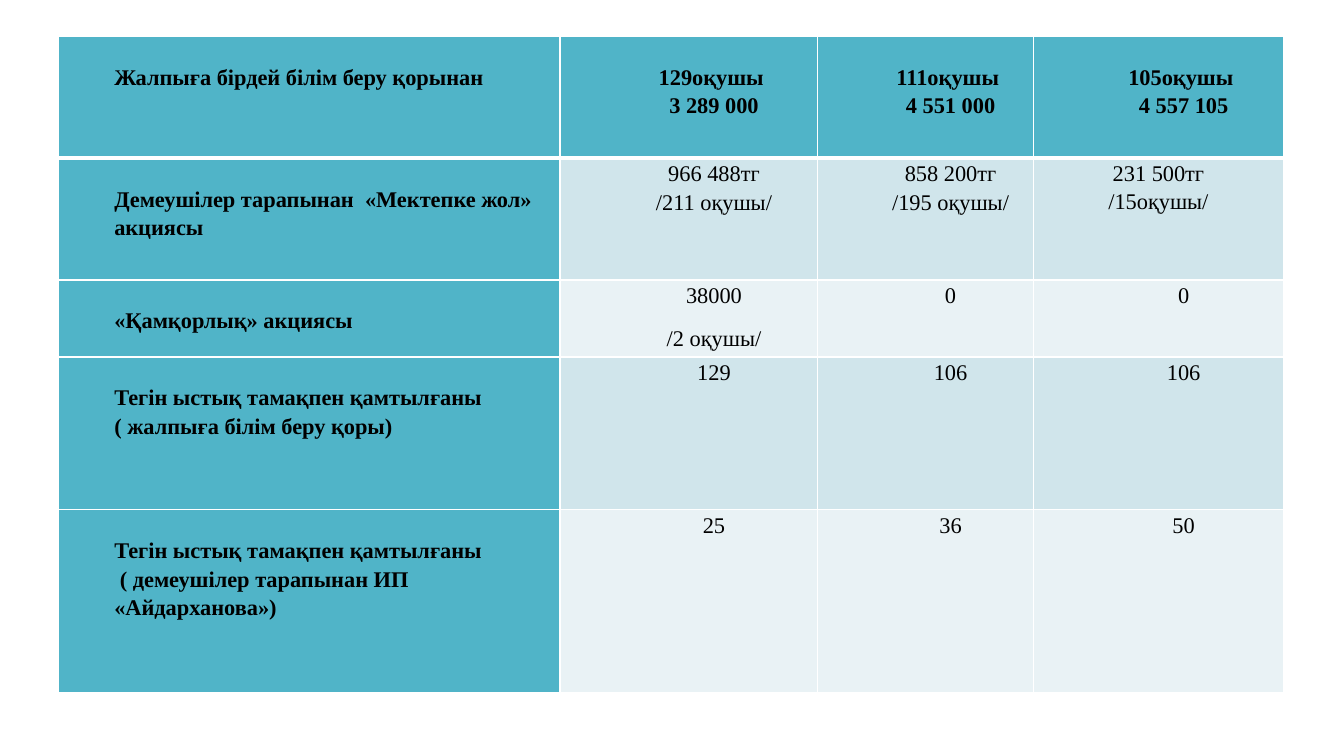
"""Build a slide with a table of school aid figures."""
from lxml.etree import SubElement
from pptx import Presentation
from pptx.dml.color import RGBColor as RGB
from pptx.enum.text import PP_ALIGN as Align
from pptx.oxml.ns import qn
from pptx.util import Pt


def color(code):
    return RGB.from_string(code)


def border(cell, side, width):
    line = SubElement(cell._tc.get_or_add_tcPr(), qn("a:ln" + side), w=str(Pt(width)))
    fill = SubElement(line, qn("a:solidFill"))
    SubElement(fill, qn("a:srgbClr"), val="FFFFFF")


rows = [
    ["Жалпыға бірдей білім беру қорынан", "129оқушы \n3\u00a0289 000",
     "111оқушы \n4\u00a0551 000", "105оқушы \n4\u00a0557 105"],
    ["Демеушілер тарапынан  «Мектепке жол» акциясы", "966 488тг\n/211 оқушы/",
     "858 200тг\n/195 оқушы/", "231\u00a0500тг\n/15оқушы/"],
    ["«Қамқорлық» акциясы", "38000\n/2 оқушы/", "0", "0"],
    ["Тегін ыстық тамақпен қамтылғаны\n( жалпыға білім беру қоры)",
     "129", "106", "106"],
    ["Тегін ыстық тамақпен қамтылғаны\n ( демеушілер тарапынан ИП «Айдарханова»)",
     "25", "36", "50"],
]
widths = [358, 184, 154, 179]
heights = [87, 87, 55, 109, 131]
bands = ["E9F2F5", "D0E5EB"]

deck = Presentation()
deck.slide_width, deck.slide_height = Pt(960), Pt(540)
slide = deck.slides.add_slide(deck.slide_layouts[6])
table = slide.shapes.add_table(
    len(rows), len(widths), Pt(42), Pt(26), Pt(sum(widths)), Pt(sum(heights))).table
for col, width in zip(table.columns, widths):
    col.width = Pt(width)
for row, height in zip(table.rows, heights):
    row.height = Pt(height)

for r, texts in enumerate(rows):
    for c, text in enumerate(texts):
        cell = table.cell(r, c)
        head = r == 0 or c == 0
        flush = (r, c) == (1, 3)
        for side in "LRTB":
            thick = (r, side) in [(0, "B"), (1, "T")]
            border(cell, side, 3 if thick else 1)
        cell.fill.solid()
        cell.fill.fore_color.rgb = color("50B4C8" if head else bands[r % 2])
        cell.margin_left = Pt(3.6 if flush else 39.6)
        cell.margin_right = Pt(3.6)
        cell.margin_top = Pt(18 if head else 0)
        cell.margin_bottom = 0
        cell.text = text
        for n, para in enumerate(cell.text_frame.paragraphs):
            para.alignment = Align.CENTER if c else Align.LEFT
            para.line_spacing = 1.14 if flush else 1.15
            if r == 2 and n:
                para.space_before = Pt(10)
            para.font.name = "Times New Roman"
            para.font.size = Pt(16)
            para.font.bold = head
            para.font.color.rgb = color("000000")

deck.save("out.pptx")
